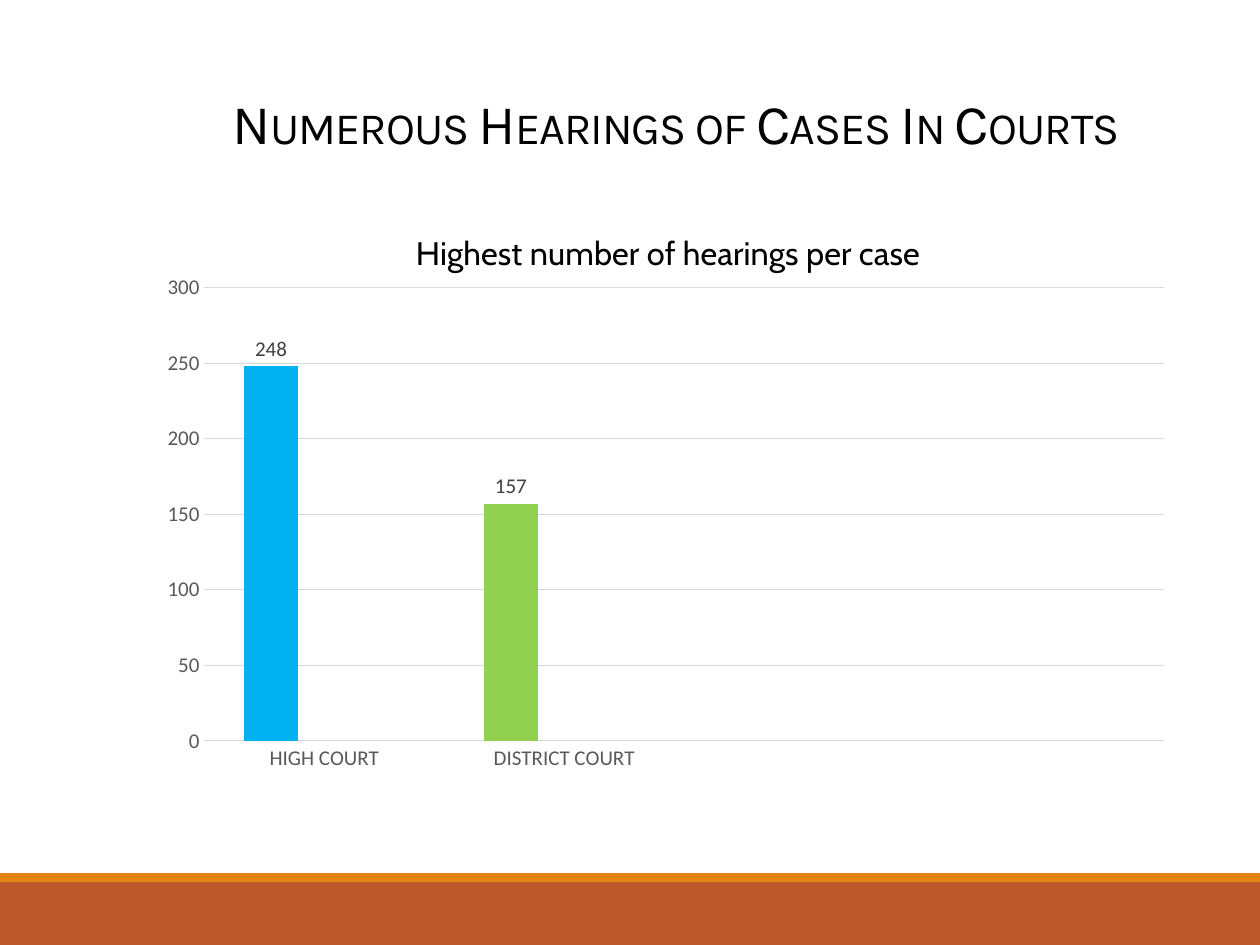
from lxml import etree
from pptx import Presentation
from pptx.chart.data import CategoryChartData
from pptx.dml.color import RGBColor
from pptx.enum.chart import XL_CHART_TYPE, XL_LABEL_POSITION, XL_TICK_MARK
from pptx.enum.shapes import MSO_SHAPE
from pptx.enum.text import MSO_ANCHOR
from pptx.oxml.ns import qn
from pptx.util import Inches, Pt

COLUMNS = XL_CHART_TYPE.COLUMN_CLUSTERED
OUTSIDE = XL_LABEL_POSITION.OUTSIDE_END
NO_TICK = XL_TICK_MARK.NONE
RECT = MSO_SHAPE.RECTANGLE
BOTTOM = MSO_ANCHOR.BOTTOM

WIDTH, HEIGHT = 10, 7.5


def rgb(value):
    return RGBColor.from_string(value)


def style_font(font, name, size, color):
    font.name, font.size, font.bold = name, Pt(size), False
    font.color.rgb = rgb(color)


class Deck:
    TITLE_FONT, CHART_TITLE_FONT, LABEL_FONT = "Karla", "Cabin", "Calibri"
    BLACK, AXIS_TEXT, LABEL_TEXT, GRID = "000000", "595959", "404040", "D9D9D9"

    def __init__(self):
        self.prs = Presentation()
        self.prs.slide_width = Inches(WIDTH)
        self.prs.slide_height = Inches(HEIGHT)
        self.s = self.prs.slides.add_slide(self.prs.slide_layouts[6])

    def band(self, top, height, color):
        sp = self.s.shapes.add_shape(RECT, 0, Inches(top), Inches(WIDTH), Inches(height))
        sp.shadow.inherit = False
        sp.fill.solid()
        sp.fill.fore_color.rgb = rgb(color)
        sp.line.fill.background()

    def title(self, text, box):
        tf = self.s.shapes.add_textbox(*map(Inches, box)).text_frame
        tf.word_wrap = True
        tf.vertical_anchor = BOTTOM
        p = tf.paragraphs[0]
        p.line_spacing = 0.85
        r = p.add_run()
        r.text = text
        style_font(r.font, self.TITLE_FONT, 32, self.BLACK)
        props = r.font._element
        props.set("cap", "small")
        props.set("spc", "-50")

    def column_chart(self, title, categories, series, box, plot_box):
        """Draw columns; each series is (name, values, color, {point: color})."""
        data = CategoryChartData()
        data.categories = categories
        for name, values, _, _ in series:
            data.add_series(name, values)
        chart = self.s.shapes.add_chart(COLUMNS, *map(Inches, box), data).chart
        style_font(chart.font, self.LABEL_FONT, 10, self.BLACK)
        chart.has_legend = False

        chart.has_title = True
        r = chart.chart_title.text_frame.paragraphs[0].add_run()
        r.text = title
        style_font(r.font, self.CHART_TITLE_FONT, 18.6, self.BLACK)
        chart.chart_title.include_in_layout = False

        for axis in (chart.category_axis, chart.value_axis):
            axis.major_tick_mark = axis.minor_tick_mark = NO_TICK
            axis.format.line.fill.background()
            style_font(axis.tick_labels.font, self.LABEL_FONT, 12, self.AXIS_TEXT)
        axis = chart.value_axis
        axis.minimum_scale, axis.maximum_scale, axis.major_unit = 0, 300, 50
        grid = axis.major_gridlines.format.line
        grid.color.rgb, grid.width = rgb(self.GRID), Pt(0.75)

        plot = chart.plots[0]
        plot.vary_by_categories = False
        plot.gap_width, plot.overlap = 150, 0
        for ser, (_, _, color, points) in zip(plot.series, series):
            fills = [ser.format.fill]
            fills += [ser.points[i].format.fill for i in points]
            for fill, value in zip(fills, [color, *points.values()]):
                fill.solid()
                fill.fore_color.rgb = rgb(value)
        labels = plot.series[0].data_labels
        labels.show_value = True
        labels.position = OUTSIDE
        style_font(labels.font, self.LABEL_FONT, 12, self.LABEL_TEXT)
        self.place_plot(chart, plot_box)

    def place_plot(self, chart, plot_box):
        """Fix the inner plot area as x, y, w, h shares of the chart."""
        area = chart._chartSpace.find(".//" + qn("c:plotArea"))
        for old in area.findall(qn("c:layout")):
            area.remove(old)
        layout = etree.Element(qn("c:layout"))
        manual = etree.SubElement(layout, qn("c:manualLayout"))
        settings = [("layoutTarget", "inner"), ("xMode", "edge"), ("yMode", "edge")]
        for tag, value in settings + list(zip("xywh", plot_box)):
            etree.SubElement(manual, qn("c:" + tag)).set("val", str(value))
        area.insert(0, layout)


def main():
    deck = Deck()
    deck.band(7, 0.5, "BD582C")
    deck.band(6.93, 0.07, "E48312")
    deck.title("Numerous Hearings of Cases In Courts", (1.75, 0.31, 8.25, 0.98))
    empty = [None] * 4
    deck.column_chart(
        "Highest number of hearings per case",
        ["HIGH COURT", "DISTRICT COURT", "", ""],
        [
            ("Series 1", [248, 157, None, None], "92D050", {0: "00B0F0"}),
            ("Series 2", empty, "BD582C", {}),
            ("Series 3", empty, "865640", {}),
        ],
        box=(1.12, 1.63, 8.37, 4.67),
        plot_box=(0.06, 0.14, 0.91, 0.77),
    )
    deck.prs.save("out.pptx")


if __name__ == "__main__":
    main()
